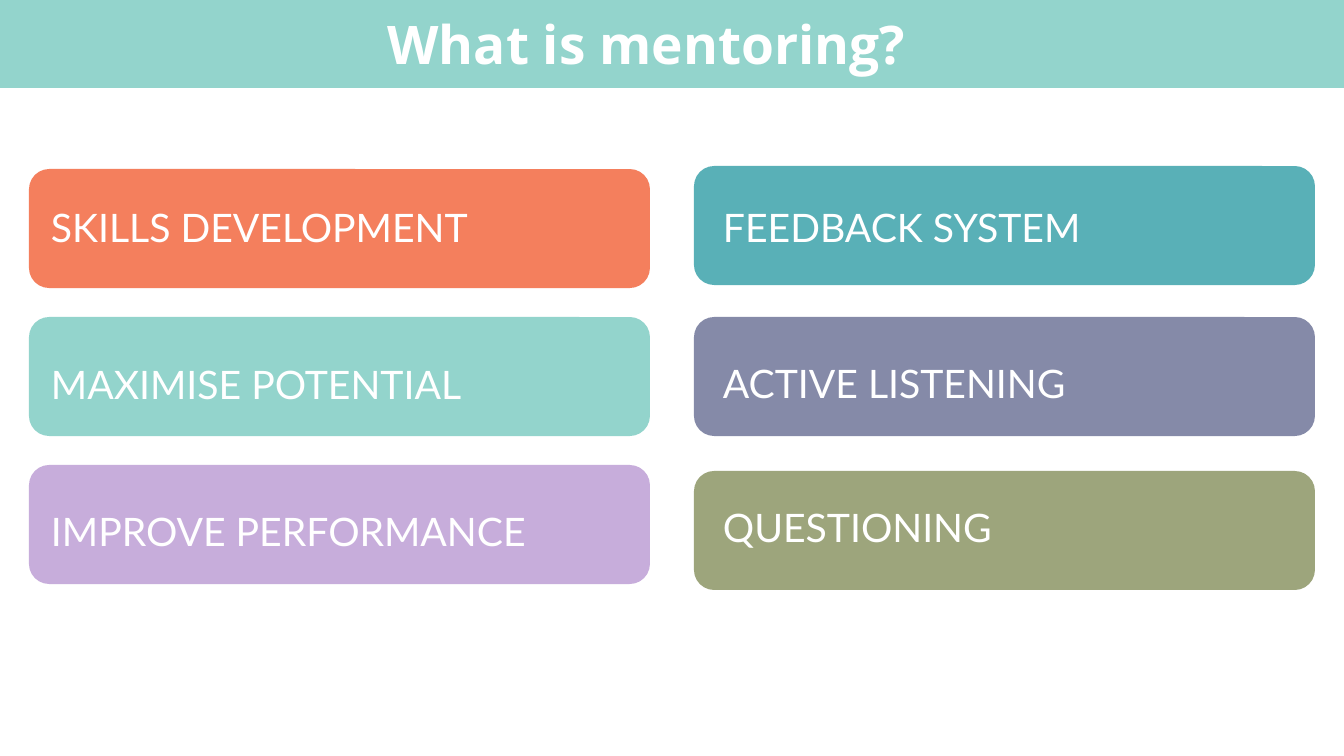
from pptx import Presentation
from pptx.dml.color import RGBColor
from pptx.enum.shapes import MSO_SHAPE
from pptx.enum.text import MSO_AUTO_SIZE, PP_ALIGN
from pptx.util import Pt

PX = 914400 / 100.8
WIDTH, HEIGHT = 1344, 756
CARD_W, CARD_H = 621, 119
WHITE, MINT = "FFFFFF", "93D4CC"

# Each column: left edge, label indent, then (top, label top, colour, label)
COLUMNS = [
    (29, 17, [(169, 217, "F47F5D", "SKILLS DEVELOPMENT"),
              (317, 374, MINT, "MAXIMISE POTENTIAL"),
              (465, 521, "C7ADDB", "IMPROVE PERFORMANCE")]),
    (694, 24, [(166, 217, "59B0B7", "FEEDBACK SYSTEM"),
               (317, 373, "858AA8", "ACTIVE LISTENING"),
               (471, 517, "9DA57C", "QUESTIONING")]),
]


def px(n):
    return round(n * PX)


def color(hex_code):
    return RGBColor.from_string(hex_code)


def add_block(s, kind, x, y, w, h, fill):
    sp = s.shapes.add_shape(kind, px(x), px(y), px(w), px(h))
    sp.shadow.inherit = False
    sp.fill.solid()
    sp.fill.fore_color.rgb = color(fill)
    sp.line.fill.background()
    return sp


def add_label(s, x, y, w, h, text, font, size, inset):
    """Add one line of white text; inset is (horizontal, vertical)."""
    tf = s.shapes.add_textbox(px(x), px(y), px(w), px(h)).text_frame
    tf.word_wrap = True
    tf.auto_size = MSO_AUTO_SIZE.SHAPE_TO_FIT_TEXT
    tf.margin_left = tf.margin_right = px(inset[0])
    tf.margin_top = tf.margin_bottom = px(inset[1])
    tf.text = text
    p = tf.paragraphs[0]
    f = p.runs[0].font
    f.name, f.size = font, Pt(size)
    f.color.rgb = color(WHITE)
    return p


def add_header(s, x, y, w, h):
    add_block(s, MSO_SHAPE.RECTANGLE, x, y, w, h, MINT)
    p = add_label(s, x + 375, y + 6, 543, 75, "What is mentoring?",
                  "Open Sans", 38, (10, 5))
    p.alignment = PP_ALIGN.CENTER
    p.runs[0].font.bold = True


def add_card(s, x, y, fill, text, label_x, label_y):
    sp = add_block(s, MSO_SHAPE.ROUNDED_RECTANGLE, x, y, CARD_W, CARD_H, fill)
    sp.adjustments[0] = 0.17
    p = add_label(s, label_x, label_y, 540, 33, text, "Lato", 28, (5, 2))
    p.line_spacing = 0.62


def main():
    prs = Presentation()
    prs.slide_width, prs.slide_height = px(WIDTH), px(HEIGHT)
    s = prs.slides.add_slide(prs.slide_layouts[6])
    add_header(s, 0, 0, WIDTH, 88)
    for x, indent, cards in COLUMNS:
        for y, label_y, fill, text in cards:
            add_card(s, x, y, fill, text, x + indent, label_y)
    prs.save("out.pptx")


if __name__ == "__main__":
    main()
